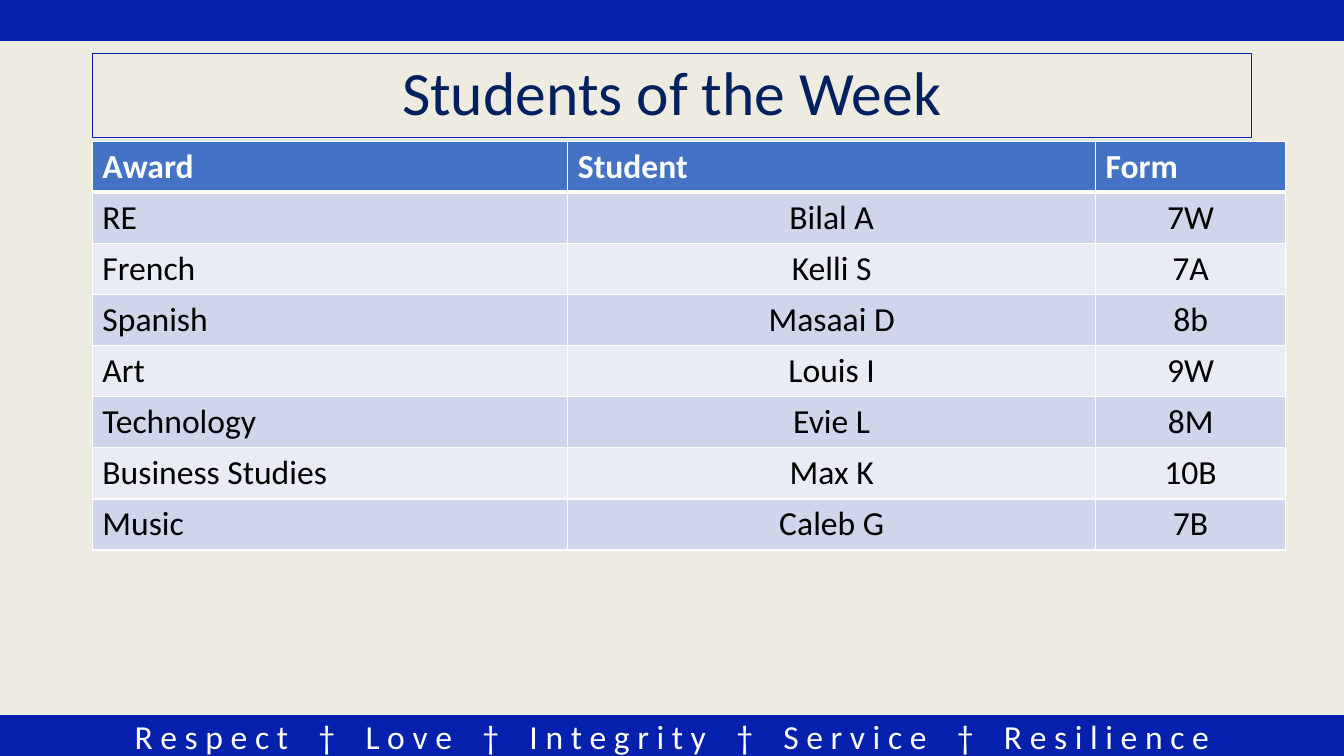
from lxml import etree
from pptx import Presentation
from pptx.dml.color import RGBColor
from pptx.enum.shapes import MSO_SHAPE
from pptx.enum.text import MSO_ANCHOR, MSO_AUTO_SIZE, PP_ALIGN
from pptx.util import Pt

RECTANGLE = MSO_SHAPE.RECTANGLE
LEFT, CENTER = PP_ALIGN.LEFT, PP_ALIGN.CENTER
TOP, MIDDLE, BOTTOM = MSO_ANCHOR.TOP, MSO_ANCHOR.MIDDLE, MSO_ANCHOR.BOTTOM
NO_AUTOFIT = MSO_AUTO_SIZE.NONE
DRAWING = "http://schemas.openxmlformats.org/drawingml/2006/main"

WIDTH, HEIGHT, BAND_HEIGHT = 960, 540, 28.8
BLUE, WHITE = "0420AC", "FFFFFF"
HEADER_FILL, ROW_FILLS = "4472C4", ("E9EBF5", "CFD5EA")
COLUMN_WIDTHS = (339.6, 377, 135.8)
ROW_HEIGHT = 36.5
MOTTO = "R e s p e c t    †    L o v e    †    I n t e g r i t y    †    S e r v i c e    †    R e s i l i e n c e"
AWARDS = [
    ("Award", "Student", "Form"),
    ("RE", "Bilal A", "7W"),
    ("French", "Kelli S", "7A"),
    ("Spanish", "Masaai D", "8b"),
    ("Art", "Louis I", "9W"),
    ("Technology", "Evie L", "8M"),
    ("Business Studies", "Max K", "10B"),
    ("Music", "Caleb G", "7B"),
]


def color(hex_string):
    return RGBColor.from_string(hex_string)


def write(frame, text, size, hex_string, align, bold=False):
    para = frame.paragraphs[0]
    para.alignment = align
    span = para.add_run()
    span.text = text
    span.font.name = "Calibri"
    span.font.size = Pt(size)
    span.font.bold = bold
    span.font.color.rgb = color(hex_string)
    return para


deck = Presentation()
deck.slide_width, deck.slide_height = Pt(WIDTH), Pt(HEIGHT)
page = deck.slides.add_slide(deck.slide_layouts.get_by_name("Title Only"))
page.background.fill.solid()
page.background.fill.fore_color.rgb = color("EEECE1")

# Bands along the top and bottom edges
for band_top, band_text in ((0, ""), (HEIGHT - BAND_HEIGHT, MOTTO)):
    band = page.shapes.add_shape(RECTANGLE, 0, Pt(band_top), Pt(WIDTH), Pt(BAND_HEIGHT))
    band.shadow.inherit = False
    band.fill.solid()
    band.fill.fore_color.rgb = color(BLUE)
    band.line.color.rgb = color(BLUE)
    band.line.width = Pt(1)
    if band_text:
        band.text_frame.vertical_anchor = MIDDLE
        write(band.text_frame, band_text, 24, WHITE, CENTER)

# Title
title = page.shapes.title
title.left, title.top, title.width, title.height = Pt(66), Pt(38.2), Pt(828), Pt(59.8)
title.line.color.rgb = color(BLUE)
title.line.width = Pt(0.75)
title.text_frame.auto_size = NO_AUTOFIT
title.text_frame.vertical_anchor = MIDDLE
write(title.text_frame, "Students of the Week", 44, "002060", CENTER).line_spacing = 0.9

# Awards table
table = page.shapes.add_table(
    len(AWARDS), len(COLUMN_WIDTHS), Pt(66), Pt(100.8),
    Pt(sum(COLUMN_WIDTHS)), Pt(ROW_HEIGHT * len(AWARDS)),
).table
for column, column_width in zip(table.columns, COLUMN_WIDTHS):
    column.width = Pt(column_width)

for row_index, award in enumerate(AWARDS):
    table.rows[row_index].height = Pt(ROW_HEIGHT)
    is_header = row_index == 0
    for column_index, text in enumerate(award):
        cell = table.cell(row_index, column_index)
        properties = cell._tc.get_or_add_tcPr()
        for side in "LRTB":
            thick = (is_header and side == "B") or (row_index == 1 and side == "T")
            border = etree.SubElement(properties, f"{{{DRAWING}}}ln{side}", w=str(Pt(3 if thick else 1)))
            border_fill = etree.SubElement(border, f"{{{DRAWING}}}solidFill")
            etree.SubElement(border_fill, f"{{{DRAWING}}}srgbClr", val=WHITE)
        cell.fill.solid()
        cell.fill.fore_color.rgb = color(HEADER_FILL if is_header else ROW_FILLS[row_index % 2])
        centered = not is_header and column_index > 0
        cell.vertical_anchor = BOTTOM if centered else TOP
        if centered:
            cell.margin_left = cell.margin_right = cell.margin_top = Pt(0.75)
        write(cell.text_frame, text, 24, WHITE if is_header else "000000",
              CENTER if centered else LEFT, is_header)

deck.save("out.pptx")
